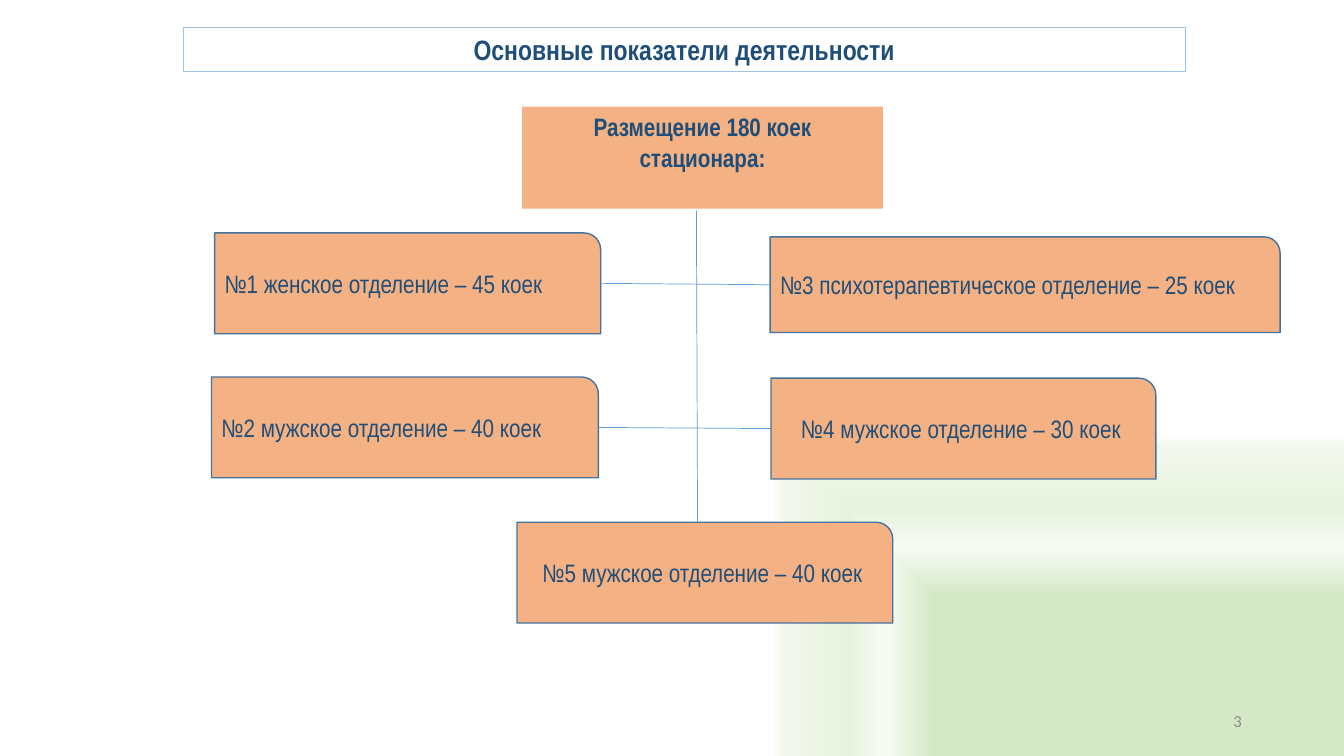
from pptx import Presentation
from pptx import util as u
from pptx.dml.color import RGBColor
from pptx.enum import shapes, text
from pptx.oxml import parse_xml
from pptx.oxml.ns import nsdecls
from lxml import etree

LEFT, MID, RIGHT = text.PP_ALIGN.LEFT, text.PP_ALIGN.CENTER, text.PP_ALIGN.RIGHT
RECT = shapes.MSO_SHAPE.RECTANGLE
CARD = shapes.MSO_SHAPE.ROUND_1_RECTANGLE


class Theme:
    font, small = "Arial Narrow", "Calibri"
    ink, fill, edge = "1F4E79", "F4B183", "43739E"
    frame, link, grey = "9DC3E6", "5B9BD5", "8C8C8C"
    title, body, note = 20, 18, 12
    stops = [(43, "D4E8C6"), (55, "F7FBF4"), (65, "E6F2DE"),
             (82, "F2F8ED"), (85, "FFFFFF")]


class Board:
    def __init__(self, slide, theme):
        self.slide, self.theme = slide, theme

    def back(self):
        stops = "".join(
            f'<a:gs pos="{pos * 1000}"><a:srgbClr val="{tone}"/></a:gs>'
            for pos, tone in self.theme.stops)
        self.slide.element.cSld.insert(0, parse_xml(
            f'<p:bg {nsdecls("p", "a")}><p:bgPr><a:gradFill rotWithShape="1">'
            f'<a:gsLst>{stops}</a:gsLst><a:path path="rect">'
            '<a:fillToRect l="100000" t="100000"/></a:path></a:gradFill>'
            '<a:effectLst/></p:bgPr></p:bg>'))

    def words(self, shape, words, size, tone, font, align, anchor, bold=False):
        frame = shape.text_frame
        frame.word_wrap = True
        frame.vertical_anchor = anchor
        para = frame.paragraphs[0]
        para.alignment = align
        run = para.add_run()
        run.text = words
        run.font.name, run.font.size, run.font.bold = font, u.Pt(size), bold
        run.font.color.rgb = RGBColor.from_string(tone)

    def box(self, kind, place, words, size, align=MID,
            anchor=text.MSO_ANCHOR.MIDDLE, fill=None, line=None, width=1,
            bold=False):
        shape = self.slide.shapes.add_shape(kind, *map(u.Cm, place))
        shape.shadow.inherit = False
        if fill:
            shape.fill.solid()
            shape.fill.fore_color.rgb = RGBColor.from_string(fill)
        else:
            shape.fill.background()
        if line:
            shape.line.color.rgb = RGBColor.from_string(line)
            shape.line.width = u.Pt(width)
        else:
            shape.line.fill.background()
        self.words(shape, words, size, self.theme.ink, self.theme.font,
                   align, anchor, bold)
        return shape

    def card(self, place, words, align=MID):
        look = self.theme
        return self.box(CARD, place, words, look.body, align,
                        fill=look.fill, line=look.edge)

    def label(self, place, words):
        look = self.theme
        shape = self.slide.shapes.add_textbox(*map(u.Cm, place))
        self.words(shape, words, look.note, look.grey, look.small,
                   RIGHT, text.MSO_ANCHOR.MIDDLE)

    def line(self, ends=(0, 0, 0, 0)):
        wire = self.slide.shapes.add_connector(
            shapes.MSO_CONNECTOR.STRAIGHT, *map(u.Cm, ends))
        wire.line.color.rgb = RGBColor.from_string(self.theme.link)
        wire.line.width = u.Pt(0.5)
        etree.SubElement(wire.element.spPr, "{http://schemas.openxmlformats.org"
                         "/drawingml/2006/main}effectLst")
        return wire

    def join(self, left, right):
        wire = self.line()
        wire.begin_connect(left, 3)
        wire.end_connect(right, 1)


def main():
    deck = Presentation()
    deck.slide_width, deck.slide_height = u.Cm(33.87), u.Cm(19.05)
    look = Theme()
    board = Board(deck.slides.add_slide(deck.slide_layouts[6]), look)
    top = text.MSO_ANCHOR.TOP

    board.back()
    board.label((23.93, 17.65, 7.62, 1.02), "3")
    board.box(RECT, (4.62, 0.69, 25.25, 1.12), "Основные показатели деятельности",
              look.title, anchor=top, line=look.frame, width=0.75, bold=True)
    board.box(RECT, (13.16, 2.69, 9.09, 2.57), "Размещение 180 коек стационара:",
              look.body, anchor=top, fill=look.fill, bold=True)
    board.line((17.55, 5.31, 17.58, 13.18))

    pairs = [
        (((5.41, 5.87, 9.73, 2.54), "№1 женское отделение – 45 коек", LEFT),
         ((19.41, 5.97, 12.85, 2.41),
          "№3 психотерапевтическое отделение – 25 коек", LEFT)),
        (((5.33, 9.5, 9.75, 2.54), "№2 мужское отделение – 40 коек", LEFT),
         ((19.43, 9.53, 9.7, 2.54), "№4 мужское отделение – 30 коек", MID)),
    ]
    for left, right in pairs:
        board.join(board.card(*left), board.card(*right))
    board.card((13.03, 13.16, 9.47, 2.54), "№5 мужское отделение – 40 коек")

    deck.save("out.pptx")


if __name__ == "__main__":
    main()
